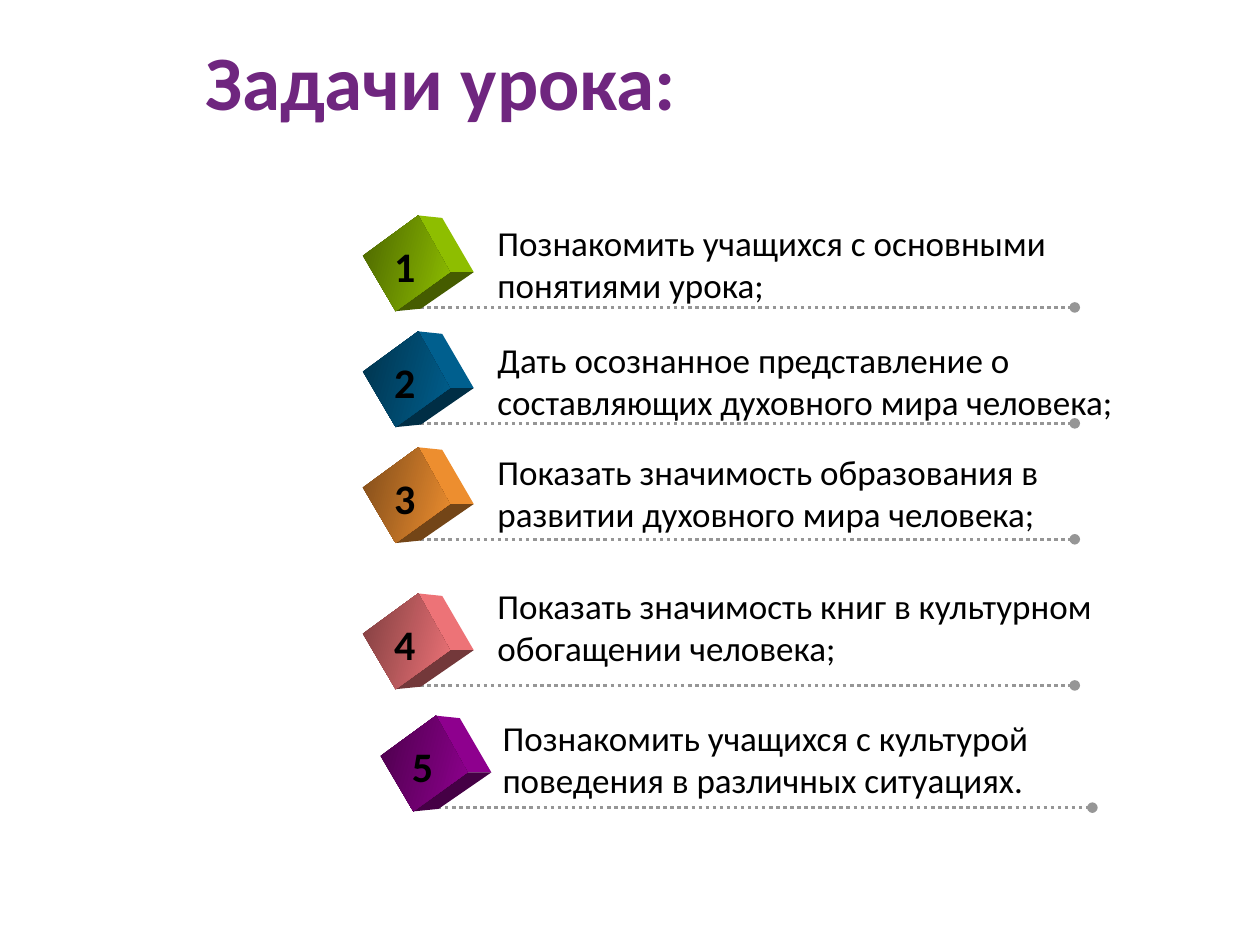
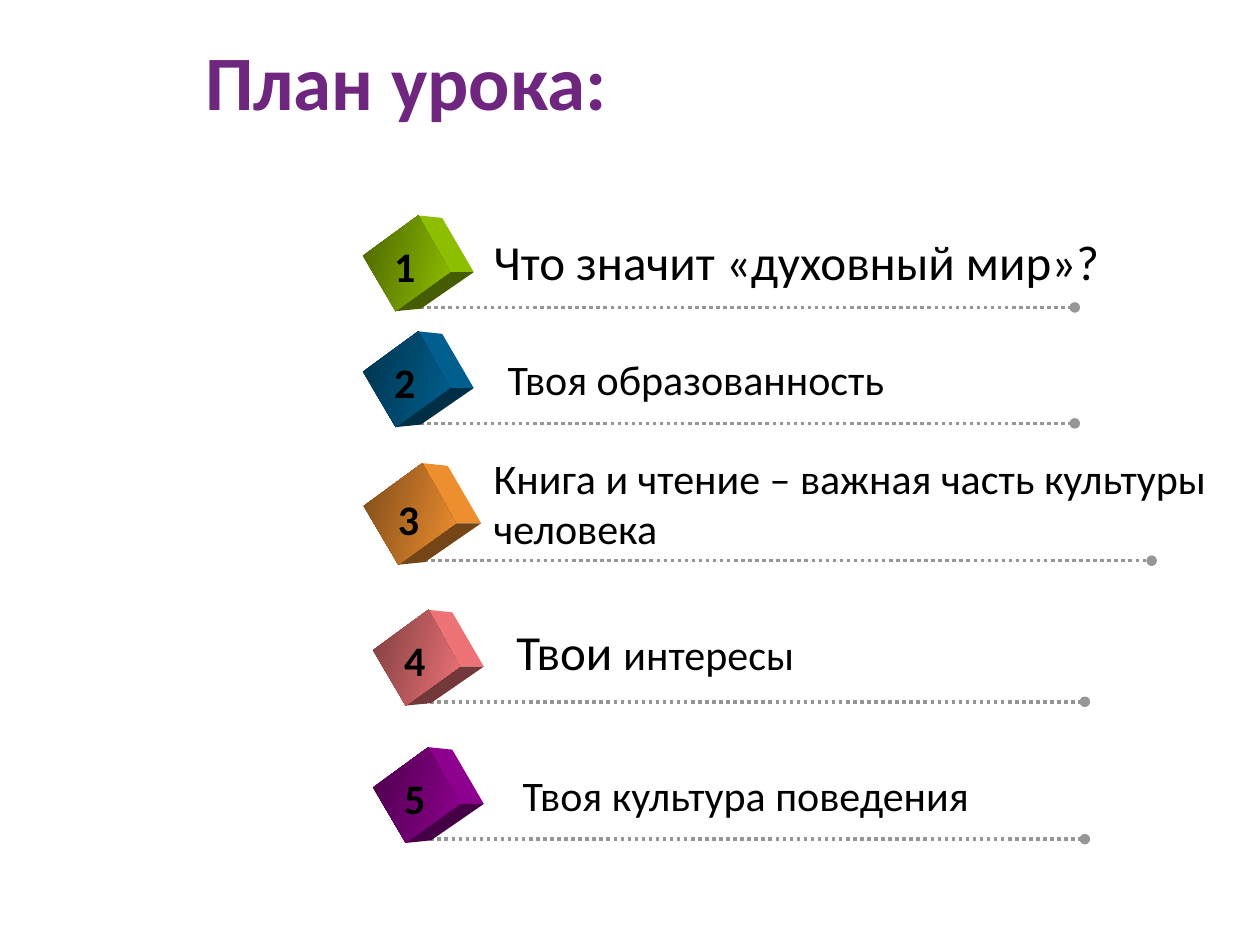
from pptx import Presentation
from pptx.dml.color import RGBColor
from pptx.enum.dml import MSO_LINE
from pptx.enum.shapes import MSO_CONNECTOR
from pptx.enum.text import MSO_ANCHOR, MSO_AUTO_SIZE
from pptx.oxml.ns import qn
from pptx.util import Inches, Pt
from lxml import etree

STRAIGHT = MSO_CONNECTOR.STRAIGHT
DOTTED = MSO_LINE.ROUND_DOT
MIDDLE = MSO_ANCHOR.MIDDLE
GROW = MSO_AUTO_SIZE.SHAPE_TO_FIT_TEXT

PURPLE = RGBColor(0x6F, 0x26, 0x7F)
BLACK = RGBColor(0x00, 0x00, 0x00)
GRAY = RGBColor(0x96, 0x96, 0x96)
CUBE_COLORS = [
    RGBColor(0x99, 0xCC, 0x00),
    RGBColor(0x00, 0x66, 0x99),
    RGBColor(0xFF, 0x99, 0x33),
    RGBColor(0xFF, 0x7C, 0x80),
    RGBColor(0x99, 0x00, 0x99),
]

TITLE_STYLE = {"name": "Calibri", "size": Pt(44), "bold": True}
NUMBER_STYLE = {"name": "Calibri", "size": Pt(24), "bold": True}
TITLE_BOX = (1.53, 0.19, 8.26, 0.98)
NUMBER_OFFSET = (-0.25, -0.58)
NUMBER_SIZE = (0.37, 0.51)
RULE_LENGTH = 5.25

FRONT_FACE = [(-0.4, -0.41), (0.04, -0.73), (0.29, -0.28), (-0.14, 0.03)]
SIDE_FACE = [(0.04, -0.73), (0.23, -0.71), (0.48, -0.28), (0.29, -0.28)]
BOTTOM_FACE = [(0.29, -0.28), (0.48, -0.28), (0.06, 0.01), (-0.14, 0.03)]
LIGHT, DARK, DARKEST = 0.93, 0.5, 0.45

SLIDES = [
    {
        "title": "Задачи урока:",
        "wrap": [True] * 5,
        "rules": [(3.28, 2.44), (3.28, 3.36), (3.28, 4.28), (3.28, 5.44), (3.42, 6.41)],
        "items": [
            ((3.85, 1.71, 5, 0.77), [("Познакомить учащихся с основными понятиями урока;", 20)]),
            ((3.85, 2.64, 5.74, 0.77), [("Дать осознанное представление о составляющих духовного мира человека;", 20)]),
            ((3.85, 3.53, 5, 0.77), [("Показать значимость образования в развитии духовного мира человека;", 20)]),
            ((3.85, 4.59, 5, 0.77), [("Показать значимость книг в культурном обогащении человека;", 20)]),
            ((3.89, 5.64, 5, 0.77), [("Познакомить учащихся с культурой поведения в различных ситуациях.", 20)]),
        ],
    },
    {
        "title": "План урока:",
        "wrap": [False, False, True, False, False],
        "rules": [(3.28, 2.44), (3.28, 3.36), (3.31, 4.45, 5.83, 1.06), (3.36, 5.57), (3.36, 6.66)],
        "items": [
            ((3.82, 1.79, 5.06, 0.57), [("Что значит «духовный мир»?", 28)]),
            ((3.93, 2.76, 3.22, 0.5), [("Твоя образованность", 24)]),
            ((3.82, 3.54, 6, 0.91), [("Книга и чтение – важная часть культуры человека", 24)]),
            ((4, 4.88, 2.43, 0.57), [("Твои ", 28), ("интересы", 24)]),
            ((4.05, 6.06, 3.85, 0.5), [("Твоя культура поведения", 24)]),
        ],
    },
]


def shade(color, share):
    return RGBColor(*(round(channel * share) for channel in color))


def add_text(shapes, box, runs, color=BLACK, wrap=True):
    text_box = shapes.add_textbox(*map(Inches, box))
    frame = text_box.text_frame
    frame.word_wrap = wrap
    frame.auto_size = GROW
    for text, style in runs:
        run = frame.paragraphs[0].add_run()
        run.text = text
        run.font.color.rgb = color
        for name, value in style.items():
            setattr(run.font, name, value)
    return frame


def add_title(slide, text):
    frame = add_text(slide.shapes, TITLE_BOX, [(text, TITLE_STYLE)], PURPLE)
    frame.auto_size = MSO_AUTO_SIZE.NONE
    frame.vertical_anchor = MIDDLE
    frame.paragraphs[0].line_spacing = 0.9


def add_rule(shapes, x, y, length):
    rule = shapes.add_connector(STRAIGHT, Inches(x), Inches(y), Inches(x + length), Inches(y))
    rule.line.color.rgb = GRAY
    rule.line.width = Pt(2)
    rule.line.dash_style = DOTTED
    etree.SubElement(rule.line._get_or_add_ln(), qn("a:tailEnd"), type="oval")
    etree.SubElement(rule._element.spPr, qn("a:effectLst"))


def add_face(shapes, x, y, scale, corners):
    points = [(Inches(x + dx * scale), Inches(y + dy * scale)) for dx, dy in corners]
    builder = shapes.build_freeform(*points[0])
    builder.add_line_segments(points[1:])
    face = builder.convert_to_shape()
    face.shadow.inherit = False
    face.line.fill.background()
    return face.fill


def add_cube(shapes, x, y, scale, color):
    for corners, share in [(SIDE_FACE, LIGHT), (BOTTOM_FACE, DARKEST)]:
        fill = add_face(shapes, x, y, scale, corners)
        fill.solid()
        fill.fore_color.rgb = shade(color, share)
    fill = add_face(shapes, x, y, scale, FRONT_FACE)
    fill.gradient()
    fill.gradient_angle = 345
    for stop, share in zip(fill.gradient_stops, (DARK, LIGHT)):
        stop.color.rgb = shade(color, share)


def add_marker(slide, number, color, x, y, length=RULE_LENGTH, scale=1):
    shapes = slide.shapes.add_group_shape().shapes
    add_rule(shapes, x, y, length)
    add_cube(shapes, x, y, scale, color)
    left, top = NUMBER_OFFSET
    add_text(shapes, (x + left, y + top, *NUMBER_SIZE), [(str(number), NUMBER_STYLE)], wrap=False)


def main():
    presentation = Presentation()
    presentation.slide_width, presentation.slide_height = Inches(10), Inches(7.5)
    for content in SLIDES:
        slide = presentation.slides.add_slide(presentation.slide_layouts[6])
        add_title(slide, content["title"])
        for number, (color, rule) in enumerate(zip(CUBE_COLORS, content["rules"]), 1):
            add_marker(slide, number, color, *rule)
        for (box, parts), wrap in zip(content["items"], content["wrap"]):
            runs = [(text, {"name": "Calibri", "size": Pt(size)}) for text, size in parts]
            add_text(slide.shapes, box, runs, wrap=wrap)
    presentation.save("out.pptx")


if __name__ == "__main__":
    main()
